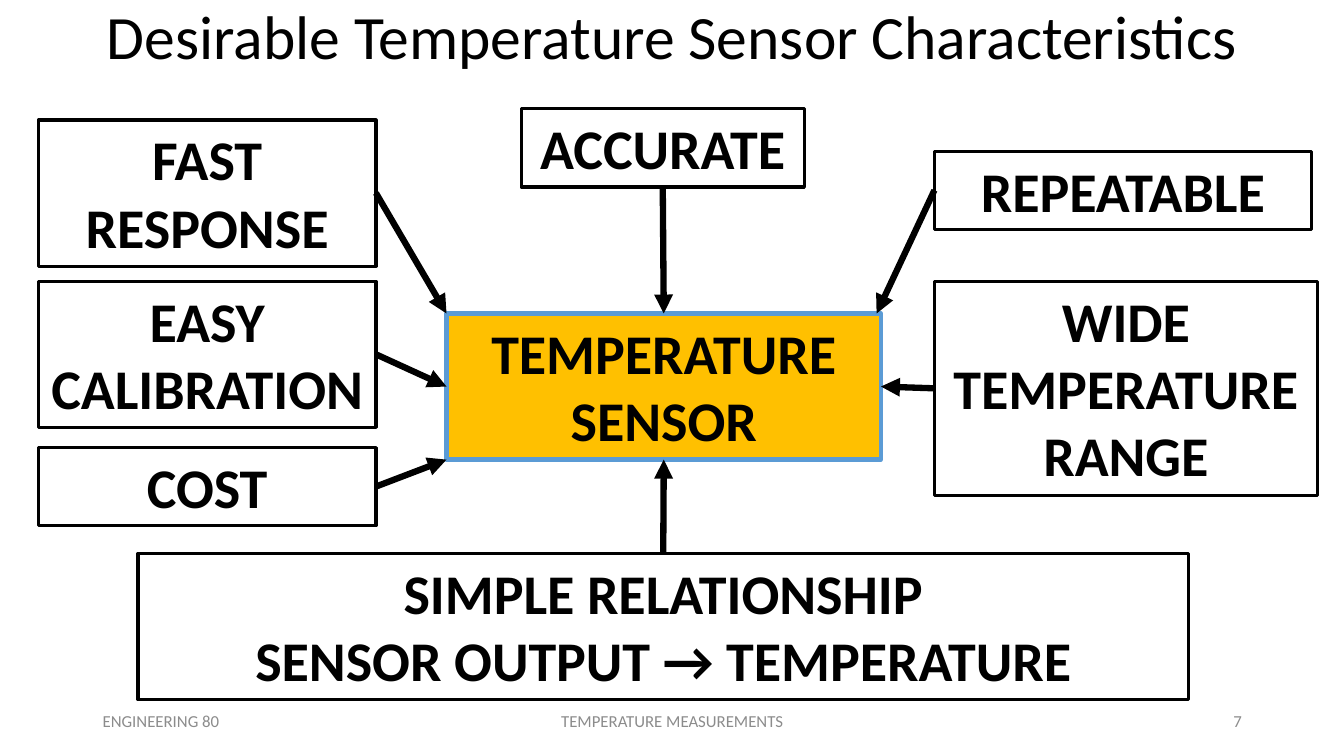
from dataclasses import dataclass

from lxml.etree import SubElement
from pptx import Presentation
from pptx.dml.color import RGBColor
from pptx.enum.shapes import MSO_CONNECTOR as Connector, MSO_SHAPE as Shape
from pptx.enum.text import MSO_ANCHOR as Anchor, PP_ALIGN as Align
from pptx.oxml.ns import qn
from pptx.util import Inches, Pt

COLUMN = Inches(13.333) / 40
ROW = Inches(7.5) / 30
TOP, LEFT, BOTTOM, RIGHT = range(4)  # connection sites of a rectangle


@dataclass(frozen=True)
class Theme:
    font: str = "Calibri"
    ink: RGBColor = RGBColor(0, 0, 0)
    muted: RGBColor = RGBColor(0x8C, 0x8C, 0x8C)
    hub_fill: RGBColor = RGBColor(0xFF, 0xC0, 0x00)
    hub_line: RGBColor = RGBColor(0x5B, 0x9B, 0xD5)
    title_size: int = 44
    box_size: int = 40
    footer_size: int = 12
    box_border: float = 2.25
    hub_border: float = 3
    arrow_width: float = 4.5


THEME = Theme()

# text lines, column, row, width, lines when wrapped, side the arrow leaves,
# share of the hub's width and height where the arrow arrives
CHARACTERISTICS = [
    (["ACCURATE"], 15.51, 4.32, 8.43, 1, BOTTOM, (0.5, 0)),
    (["REPEATABLE"], 27.81, 6, 11.22, 1, LEFT, (0.99, 0)),
    (["WIDE TEMPERATURE RANGE"], 27.81, 11.16, 11.4, 3, LEFT, (1, 0.5)),
    (["EASY CALIBRATION"], 1.14, 11.16, 10.05, 2, RIGHT, (0, 0.5)),
    (["FAST RESPONSE"], 1.14, 4.76, 10.05, 2, RIGHT, (0, 0)),
    (["SIMPLE RELATIONSHIP", "SENSOR OUTPUT → TEMPERATURE"],
     4.11, 21.96, 31.26, 2, TOP, (0.5, 1)),
    (["COST"], 1.14, 17.76, 10.05, 1, RIGHT, (0, 1)),
]

FOOTERS = [
    ("ENGINEERING 80", 2.76, 9, Align.LEFT),
    ("TEMPERATURE MEASUREMENTS", 13.26, 13.5, Align.CENTER),
    ("7", 28.26, 9, Align.RIGHT),
]


def place(column, row, columns, rows):
    """Turn grid units into left, top, width and height."""
    return (round(column * COLUMN), round(row * ROW),
            round(columns * COLUMN), round(rows * ROW))


def write(frame, lines, size, color, align=Align.CENTER, bold=False, spacing=1.0):
    frame.word_wrap = True
    for index, line in enumerate(lines):
        paragraph = frame.paragraphs[0] if index == 0 else frame.add_paragraph()
        paragraph.alignment = align
        paragraph.line_spacing = spacing
        run = paragraph.add_run()
        run.text = line
        run.font.name = THEME.font
        run.font.size = Pt(size)
        run.font.bold = bold
        run.font.color.rgb = color


def add_label(slide, text, area, size, color, align=Align.CENTER, spacing=1.0):
    frame = slide.shapes.add_textbox(*place(*area)).text_frame
    frame.vertical_anchor = Anchor.MIDDLE
    write(frame, [text], size, color, align, spacing=spacing)


def add_box(slide, lines, column, row, columns, line_count,
            border=THEME.ink, border_width=THEME.box_border, fill=None):
    """Add a bordered box whose height follows its number of text lines."""
    area = place(column, row, columns, 0.4 + 2.7 * line_count)
    box = slide.shapes.add_shape(Shape.RECTANGLE, *area)
    box.shadow.inherit = False
    if fill is None:
        box.fill.background()
    else:
        box.fill.solid()
        box.fill.fore_color.rgb = fill
    box.line.color.rgb = border
    box.line.width = Pt(border_width)
    box.text_frame.vertical_anchor = Anchor.TOP
    write(box.text_frame, lines, THEME.box_size, THEME.ink, bold=True)
    return box


def add_arrow(slide, box, side, hub, target):
    """Run an arrow from a side of the box to a share of the hub's outline."""
    across, down = target
    end = (round(hub.left + across * hub.width), round(hub.top + down * hub.height))
    arrow = slide.shapes.add_connector(Connector.STRAIGHT, box.left, box.top, *end)
    arrow.begin_connect(box, side)
    arrow.line.color.rgb = THEME.ink
    arrow.line.width = Pt(THEME.arrow_width)
    SubElement(arrow.line._get_or_add_ln(), qn("a:tailEnd"), type="triangle")
    SubElement(arrow._element.spPr, qn("a:effectLst"))


def main():
    deck = Presentation()
    deck.slide_width, deck.slide_height = round(40 * COLUMN), round(30 * ROW)
    slide = deck.slides.add_slide(deck.slide_layouts[6])

    add_label(slide, "Desirable Temperature Sensor Characteristics",
              (2.76, 0.08, 34.5, 2.96), THEME.title_size, THEME.ink, spacing=0.9)
    for text, column, columns, align in FOOTERS:
        add_label(slide, text, (column, 27.8, columns, 1.6),
                  THEME.footer_size, THEME.muted, align)

    hub = add_box(slide, ["TEMPERATURE SENSOR"], 13.29, 12.44, 12.93, 2,
                  THEME.hub_line, THEME.hub_border, THEME.hub_fill)
    for *content, side, target in CHARACTERISTICS:
        box = add_box(slide, *content)
        add_arrow(slide, box, side, hub, target)

    deck.save("out.pptx")


if __name__ == "__main__":
    main()
